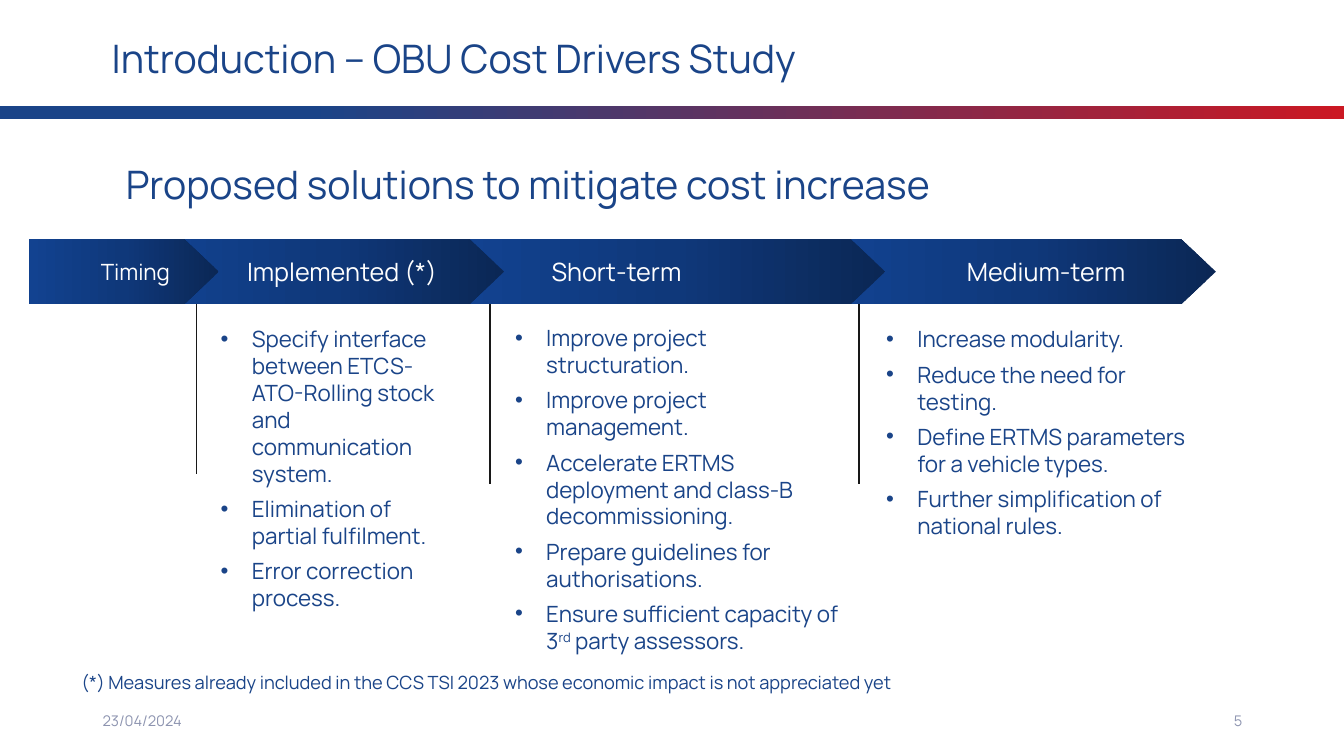
from lxml.etree import SubElement
from pptx import Presentation
from pptx.dml.color import RGBColor
from pptx.enum.shapes import MSO_CONNECTOR, MSO_SHAPE
from pptx.enum.text import MSO_ANCHOR, MSO_AUTO_SIZE, PP_ALIGN
from pptx.oxml.ns import qn
from pptx.util import Inches, Pt

FONT = "Manrope"
BLUE, GREY, WHITE, BLACK = "1A4488", "8D94B0", "FFFFFF", "181818"
BAR_STOPS = [(23, BLUE), (100, "CB1823")]
ARROW_STOPS = [(0, "0B2755"), (50, "0F387A"), (100, "124290")]
ARROW_TOP, ARROW_HEIGHT = 2.37, 0.65

# left, width, text inset, label, size; later arrows lie on top
PHASES = [
    (8.33, 3.73, 1.26, "Medium-term", 18),
    (4.6, 4.18, 0.87, "Short-term", 18),
    (1.58, 3.42, 0.87, "Implemented (*)", 18),
    (0.29, 1.88, 0.71, "Timing", 16),
]
# x, top, bottom
DIVIDERS = [(1.95, 2.92, 4.7), (4.86, 3.01, 4.8), (8.52, 3.01, 4.8)]
# box, then one list of runs per measure; a run after the first is superscript or normal in turn
MEASURES = [
    ((2.09, 3.18, 2.51, 2.96), [
        ["Specify interface between ETCS-ATO-Rolling stock and communication system."],
        ["Elimination of partial fulfilment."],
        ["Error correction process."],
    ]),
    ((5.01, 3.17, 3.46, 3.4), [
        ["Improve project structuration."],
        ["Improve project management."],
        ["Accelerate ERTMS deployment and class-B decommissioning."],
        ["Prepare guidelines for authorisations."],
        ["Ensure sufficient capacity of 3", "rd", " party assessors."],
    ]),
    ((8.69, 3.18, 3.21, 2.51), [
        ["Increase modularity."],
        ["Reduce the need for testing."],
        ["Define ERTMS parameters for a vehicle types."],
        ["Further simplification of national rules."],
    ]),
]


def color(hex_code):
    return RGBColor.from_string(hex_code)


def add_run(paragraph, text, size, hex_code):
    run = paragraph.add_run()
    run.text = text
    run.font.name = FONT
    run.font.size = Pt(size)
    run.font.color.rgb = color(hex_code)
    return run


def add_frame(slide, box):
    frame = slide.shapes.add_textbox(*map(Inches, box)).text_frame
    frame.word_wrap = True
    return frame


def add_label(slide, box, text, size, hex_code=BLUE, align=PP_ALIGN.LEFT,
              anchor=MSO_ANCHOR.TOP):
    frame = add_frame(slide, box)
    frame.vertical_anchor = anchor
    paragraph = frame.paragraphs[0]
    paragraph.alignment = align
    add_run(paragraph, text, size, hex_code)


def add_gradient_shape(slide, preset, box, stops, angle):
    shape = slide.shapes.add_shape(preset, *map(Inches, box))
    shape.shadow.inherit = False
    shape.line.fill.background()
    shape.fill.gradient()
    shape.fill.gradient_angle = angle
    stop_list = shape._element.spPr.find(qn("a:gradFill")).find(qn("a:gsLst"))
    for old_stop in list(stop_list):
        stop_list.remove(old_stop)
    for percent, hex_code in stops:
        stop = SubElement(stop_list, qn("a:gs"), pos=str(percent * 1000))
        SubElement(stop, qn("a:srgbClr"), val=hex_code)
    return shape


def add_phase(slide, left, width, inset, label, size):
    box = (left, ARROW_TOP, width, ARROW_HEIGHT)
    arrow = add_gradient_shape(slide, MSO_SHAPE.RIGHT_ARROW, box, ARROW_STOPS, 180)
    arrow.adjustments[0] = 1
    arrow.adjustments[1] = 0.535
    frame = arrow.text_frame
    frame.margin_left = Inches(inset)
    frame.margin_right = frame.margin_top = frame.margin_bottom = 0
    frame.vertical_anchor = MSO_ANCHOR.MIDDLE
    paragraph = frame.paragraphs[0]
    paragraph.alignment = PP_ALIGN.LEFT
    add_run(paragraph, label, size, WHITE)


def add_divider(slide, x, top, bottom):
    divider = slide.shapes.add_connector(
        MSO_CONNECTOR.STRAIGHT, Inches(x), Inches(top), Inches(x), Inches(bottom))
    divider.line.color.rgb = color(BLACK)
    divider.line.width = Pt(1)
    SubElement(divider._element.spPr, qn("a:effectLst"))


def add_bullet(paragraph):
    properties = paragraph._p.get_or_add_pPr()
    properties.set("marL", str(Inches(0.31)))
    properties.set("indent", str(-Inches(0.31)))
    SubElement(properties, qn("a:buFont"), typeface="Arial")
    SubElement(properties, qn("a:buChar"), char="•")
    paragraph.space_after = Pt(6)


def add_measures(slide, box, measures):
    frame = add_frame(slide, box)
    frame.auto_size = MSO_AUTO_SIZE.SHAPE_TO_FIT_TEXT
    for index, parts in enumerate(measures):
        paragraph = frame.add_paragraph() if index else frame.paragraphs[0]
        add_bullet(paragraph)
        for position, part in enumerate(parts):
            run = add_run(paragraph, part, 16, BLUE)
            if position % 2:
                run.font._element.set("baseline", "30000")


def main():
    presentation = Presentation()
    presentation.slide_width = Inches(13.33)
    presentation.slide_height = Inches(7.5)
    slide = presentation.slides.add_slide(presentation.slide_layouts[6])

    add_gradient_shape(slide, MSO_SHAPE.RECTANGLE, (0, 1.05, 13.33, 0.13), BAR_STOPS, 0)
    add_label(slide, (0.92, 6.95, 3, 0.4), "23/04/2024", 10.5, GREY,
              anchor=MSO_ANCHOR.MIDDLE)
    add_label(slide, (9.42, 6.95, 3, 0.4), "5", 10.5, GREY,
              PP_ALIGN.RIGHT, MSO_ANCHOR.MIDDLE)
    add_label(slide, (1.01, 0.29, 8.22, 0.57), "Introduction – OBU Cost Drivers Study", 28)
    for divider in DIVIDERS:
        add_divider(slide, *divider)
    for phase in PHASES:
        add_phase(slide, *phase)
    add_label(slide, (1.15, 1.54, 9.13, 0.57),
              "Proposed solutions to mitigate cost increase", 28)
    for box, measures in MEASURES:
        add_measures(slide, box, measures)
    add_label(slide, (0.71, 6.61, 11.08, 0.32),
              "(*) Measures already included in the CCS TSI 2023 whose economic impact "
              "is not appreciated yet", 13)

    presentation.save("out.pptx")


if __name__ == "__main__":
    main()
